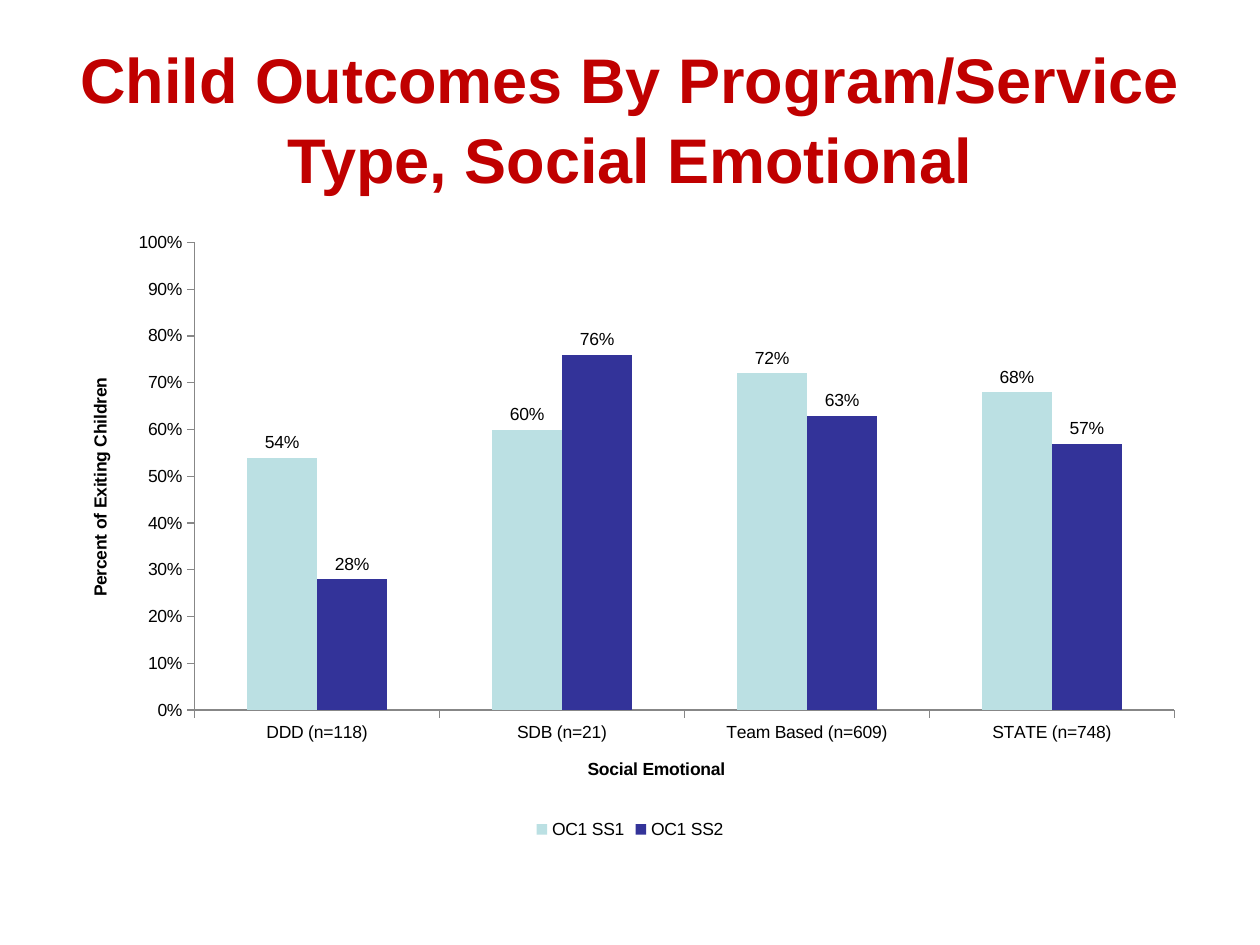
from dataclasses import dataclass

from lxml.etree import SubElement
from pptx import Presentation
from pptx.chart.data import CategoryChartData
from pptx.dml.color import RGBColor
from pptx.enum.chart import XL_CHART_TYPE, XL_LABEL_POSITION, XL_LEGEND_POSITION, XL_TICK_MARK
from pptx.enum.text import MSO_ANCHOR, MSO_AUTO_SIZE, PP_ALIGN
from pptx.oxml.ns import qn
from pptx.util import Cm, Pt


@dataclass(frozen=True)
class Theme:
    font: str = "Arial"
    heading: RGBColor = RGBColor(0xC0, 0x00, 0x00)
    ink: RGBColor = RGBColor(0x00, 0x00, 0x00)
    axis: RGBColor = RGBColor(0x87, 0x87, 0x87)
    heading_size: Pt = Pt(36)
    chart_size: Pt = Pt(10)


@dataclass(frozen=True)
class Outcome:
    name: str
    shares: tuple[float, ...]
    color: RGBColor


THEME = Theme()
MARGIN, CONTENT_WIDTH = Cm(1.27), Cm(22.86)
PROGRAMS = ("DDD (n=118)", "SDB (n=21)", "Team Based (n=609)", "STATE (n=748)")
OUTCOMES = (
    Outcome("OC1 SS1", (0.54, 0.60, 0.72, 0.68), RGBColor(0xBB, 0xE0, 0xE3)),
    Outcome("OC1 SS2", (0.28, 0.76, 0.63, 0.57), RGBColor(0x33, 0x33, 0x99)),
)
PLOT_AREA = {"x": 0.116, "y": 0.035, "w": 0.864, "h": 0.75}


def style_font(font, size: Pt, color: RGBColor, bold: bool = False) -> None:
    font.name, font.size, font.bold = THEME.font, size, bold
    font.color.rgb = color


def add_heading(slide, text: str) -> None:
    heading = slide.shapes.title
    heading.left, heading.top = MARGIN, Cm(0.76)
    heading.width, heading.height = CONTENT_WIDTH, Cm(3.18)
    frame = heading.text_frame
    frame.word_wrap = True
    frame.auto_size = MSO_AUTO_SIZE.NONE
    frame.vertical_anchor = MSO_ANCHOR.MIDDLE
    paragraph = frame.paragraphs[0]
    paragraph.alignment = PP_ALIGN.CENTER
    paragraph.line_spacing = 1.05
    run = paragraph.add_run()
    run.text = text
    style_font(run.font, THEME.heading_size, THEME.heading, bold=True)


def style_axis(axis, caption: str) -> None:
    axis.has_major_gridlines = False
    axis.major_tick_mark = XL_TICK_MARK.OUTSIDE
    axis.minor_tick_mark = XL_TICK_MARK.NONE
    axis.format.line.color.rgb = THEME.axis
    axis.format.line.width = Pt(0.75)
    run = axis.axis_title.text_frame.paragraphs[0].add_run()
    run.text = caption
    style_font(run.font, THEME.chart_size, THEME.ink, bold=True)


def place_plot(chart, area: dict[str, float]) -> None:
    """Fix the inner plot area as fractions of the chart."""
    plot_area = chart.plots[0]._element.getparent()
    layout = plot_area.find(qn("c:layout"))
    if layout is None:
        layout = SubElement(plot_area, qn("c:layout"))
        plot_area.insert(0, layout)
    manual = SubElement(layout, qn("c:manualLayout"))
    settings = {"layoutTarget": "inner", "xMode": "edge", "yMode": "edge", **area}
    for tag, value in settings.items():
        SubElement(manual, qn(f"c:{tag}")).set("val", str(value))


def style_outcome(series, outcome: Outcome) -> None:
    series.invert_if_negative = False
    series.format.fill.solid()
    series.format.fill.fore_color.rgb = outcome.color
    labels = series.data_labels
    labels.show_value = True
    labels.number_format, labels.number_format_is_linked = "0%", False
    labels.position = XL_LABEL_POSITION.OUTSIDE_END
    style_font(labels.font, THEME.chart_size, THEME.ink)


def add_outcome_chart(slide) -> None:
    data = CategoryChartData(number_format="0%")
    data.categories = PROGRAMS
    for outcome in OUTCOMES:
        data.add_series(outcome.name, outcome.shares)
    chart = slide.shapes.add_chart(
        XL_CHART_TYPE.COLUMN_CLUSTERED, MARGIN, Cm(4.45), CONTENT_WIDTH, Cm(12.57), data
    ).chart
    chart.has_title = False
    style_font(chart.font, THEME.chart_size, THEME.ink)

    # Axes
    style_axis(chart.category_axis, "Social Emotional")
    percent = chart.value_axis
    style_axis(percent, "Percent of Exiting Children")
    percent.minimum_scale, percent.maximum_scale, percent.major_unit = 0, 1, 0.1
    percent.tick_labels.number_format = "0%"
    percent.tick_labels.number_format_is_linked = False

    # Columns
    columns = chart.plots[0]
    columns.gap_width, columns.overlap = 150, 0
    columns.vary_by_categories = False
    for series, outcome in zip(columns.series, OUTCOMES):
        style_outcome(series, outcome)
    place_plot(chart, PLOT_AREA)

    # Legend
    chart.has_legend = True
    chart.legend.position = XL_LEGEND_POSITION.BOTTOM
    chart.legend.include_in_layout = False
    style_font(chart.legend.font, THEME.chart_size, THEME.ink)


def main() -> None:
    deck = Presentation()
    deck.slide_width, deck.slide_height = Cm(25.4), Cm(19.05)
    slide = deck.slides.add_slide(deck.slide_layouts.get_by_name("Title Only"))
    add_heading(slide, "Child Outcomes By Program/Service Type, Social Emotional")
    add_outcome_chart(slide)
    deck.save("out.pptx")


if __name__ == "__main__":
    main()
